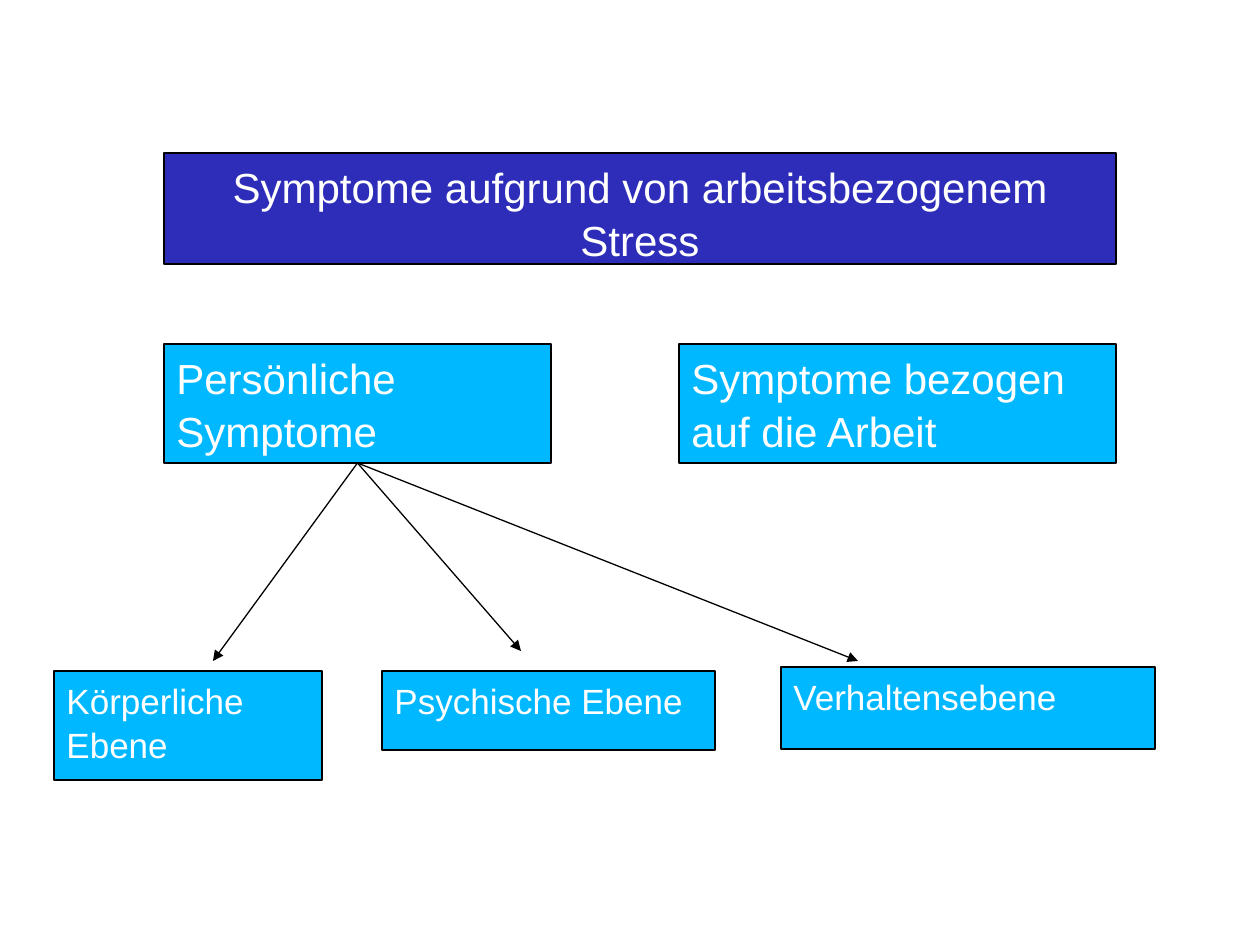
from pptx import Presentation
from pptx.dml.color import RGBColor
from pptx.enum.shapes import MSO_CONNECTOR, MSO_SHAPE
from pptx.enum.text import MSO_ANCHOR, PP_ALIGN
from pptx.oxml.ns import qn
from pptx.util import Pt
from lxml import etree

EMU_PER_INCH = 914400
PX_PER_INCH = 126
RECTANGLE = MSO_SHAPE.RECTANGLE
STRAIGHT = MSO_CONNECTOR.STRAIGHT
TOP = MSO_ANCHOR.TOP
LEFT = PP_ALIGN.LEFT
CENTER = PP_ALIGN.CENTER
BOTTOM_SITE = 2

WHITE = RGBColor(0xFF, 0xFF, 0xFF)
BLACK = RGBColor(0x00, 0x00, 0x00)
SKY = RGBColor(0x00, 0xB8, 0xFF)
INDIGO = RGBColor(0x2D, 0x2D, 0xB9)


def px(length):
    return round(length * EMU_PER_INCH / PX_PER_INCH)


class Diagram:
    font = "Arial"
    line_width = Pt(0.75)
    line_spacing = 1.05

    def __init__(self, slide):
        self.slide = slide

    def box(self, text, left, top, width, height, size, fill=SKY, align=LEFT):
        shape = self.slide.shapes.add_shape(
            RECTANGLE, px(left), px(top), px(width), px(height))
        shape.shadow.inherit = False
        shape.fill.solid()
        shape.fill.fore_color.rgb = fill
        shape.line.color.rgb = BLACK
        shape.line.width = self.line_width
        text_frame = shape.text_frame
        text_frame.word_wrap = True
        text_frame.vertical_anchor = TOP
        text_frame.text = text
        paragraph = text_frame.paragraphs[0]
        paragraph.alignment = align
        paragraph.line_spacing = self.line_spacing
        font = paragraph.runs[0].font
        font.name = self.font
        font.size = Pt(size)
        font.color.rgb = WHITE
        return shape

    def arrow(self, source, end_x, end_y):
        connector = self.slide.shapes.add_connector(
            STRAIGHT, 0, 0, px(end_x), px(end_y))
        connector.begin_connect(source, BOTTOM_SITE)
        connector.line.color.rgb = BLACK
        connector.line.width = self.line_width
        line = connector.line._get_or_add_ln()
        etree.SubElement(line, qn("a:tailEnd"), type="triangle")
        etree.SubElement(connector._element.spPr, qn("a:effectLst"))


def main():
    presentation = Presentation()
    presentation.slide_width = px(1260)
    presentation.slide_height = px(945)
    slide = presentation.slides.add_slide(presentation.slide_layouts[6])
    diagram = Diagram(slide)

    personal = diagram.box("Persönliche Symptome", 164, 344, 387, 119, 24)
    diagram.box("Symptome bezogen auf die Arbeit", 679, 344, 437, 119, 24)

    diagram.box("Körperliche Ebene", 54, 671, 268, 109, 20)
    diagram.box("Verhaltensebene", 781, 667, 374, 82, 20)
    diagram.box("Psychische Ebene", 382, 671, 333, 79, 20)

    for end_x, end_y in ((213, 661), (521, 651), (858, 661)):
        diagram.arrow(personal, end_x, end_y)

    diagram.box("Symptome aufgrund von arbeitsbezogenem Stress",
                164, 153, 952, 111, 24, INDIGO, CENTER)

    presentation.save("out.pptx")


if __name__ == "__main__":
    main()
